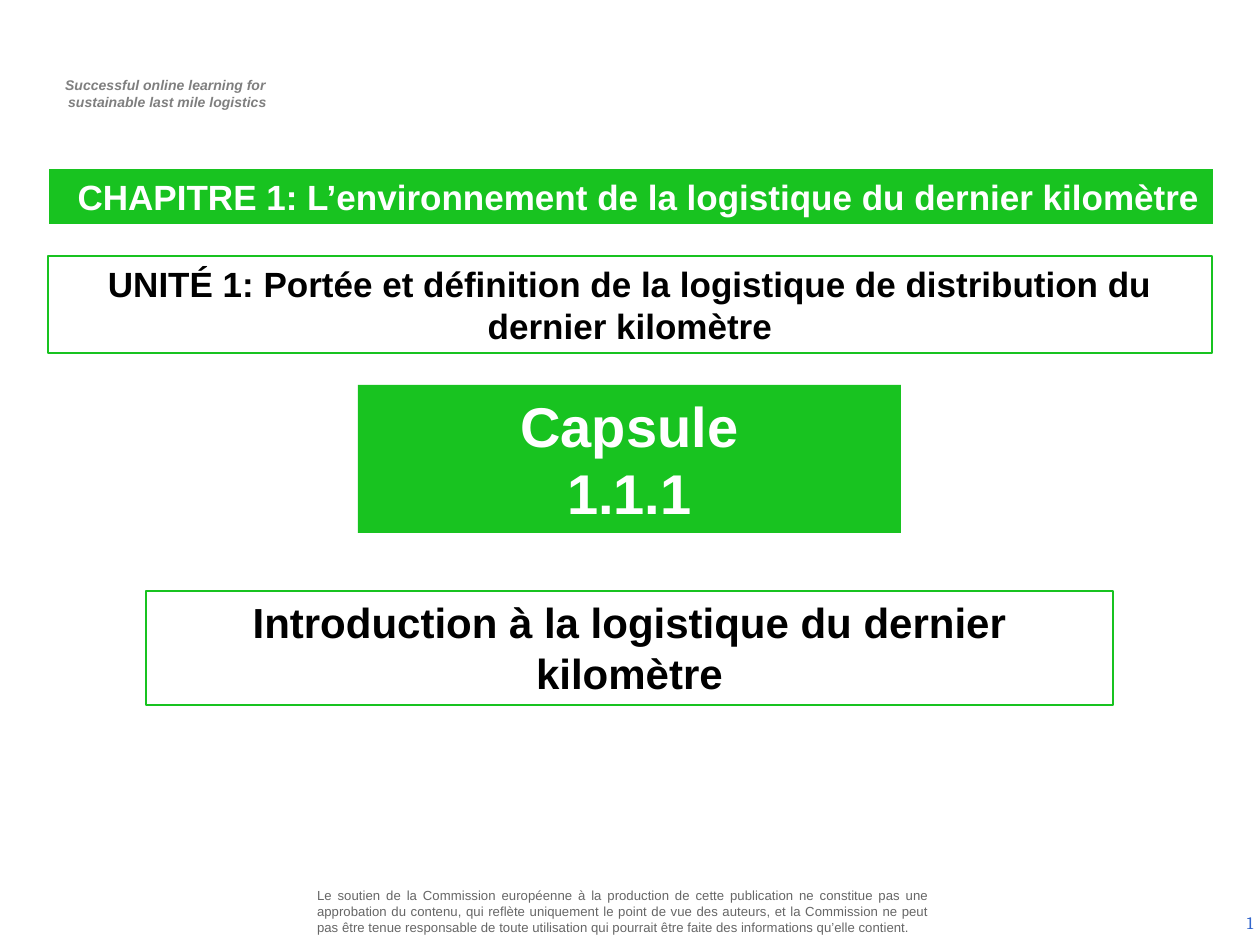
from pptx import Presentation
from pptx.dml.color import RGBColor
from pptx.enum.shapes import MSO_SHAPE as SHAPE
from pptx.enum.text import MSO_ANCHOR as ANCHOR, PP_ALIGN as ALIGN
from pptx.util import Emu, Pt

SCALE = 914400 / 126
GREEN = RGBColor(0x18, 0xC3, 0x20)
WHITE = RGBColor(0xFF, 0xFF, 0xFF)
BLACK = RGBColor(0x00, 0x00, 0x00)
GRAY = RGBColor(0x7F, 0x7F, 0x7F)
DARK_GRAY = RGBColor(0x66, 0x66, 0x66)
BLUE = RGBColor(0x33, 0x66, 0xCC)


def px(length):
    return Emu(round(length * SCALE))


def write(shape, lines, size, color, align, font="Arial", bold=False, italic=False,
          anchor=ANCHOR.TOP, insets=(13, 6, 13, 6)):
    frame = shape.text_frame
    frame.word_wrap = True
    frame.vertical_anchor = anchor
    frame.margin_left, frame.margin_top, frame.margin_right, frame.margin_bottom = map(px, insets)
    for index, line in enumerate(lines):
        paragraph = frame.add_paragraph() if index else frame.paragraphs[0]
        paragraph.alignment = align
        run = paragraph.add_run()
        run.text = line
        run.font.name = font
        run.font.size = Pt(size)
        run.font.bold = bold
        run.font.italic = italic
        run.font.color.rgb = color


presentation = Presentation()
presentation.slide_width = px(1260)
presentation.slide_height = px(945)
slide = presentation.slides.add_slide(presentation.slide_layouts[6])

tagline = slide.shapes.add_textbox(px(37), px(71), px(256), px(47))
write(tagline, ["Successful online learning for ", "sustainable last mile logistics"],
      8, GRAY, ALIGN.CENTER, bold=True, italic=True, insets=(18, 6, 13, 6))

disclaimer = slide.shapes.add_textbox(px(312), px(886), px(621), px(50))
write(disclaimer, [
    "Le soutien de la Commission européenne à la production de cette publication ne constitue pas "
    "une approbation du contenu, qui reflète uniquement le point de vue des auteurs, et la "
    "Commission ne peut pas être tenue responsable de toute utilisation qui pourrait être faite "
    "des informations qu’elle contient."],
    7.5, DARK_GRAY, ALIGN.JUSTIFY, anchor=ANCHOR.MIDDLE, insets=(5, 5, 5, 5))

page_number = slide.shapes.add_textbox(px(972), px(898), px(294), px(50))
write(page_number, ["1"], 10, BLUE, ALIGN.RIGHT, font="Cambria", anchor=ANCHOR.MIDDLE)

banners = [
    ((358, 385, 543, 148), ["Capsule", "1.1.1"], 32, ALIGN.CENTER, None),
    ((146, 591, 967, 114), ["Introduction à la logistique du dernier kilomètre"],
     24, ALIGN.CENTER, 1.5),
    ((49, 169, 1164, 55), ["CHAPITRE 1: L’environnement de la logistique du dernier kilomètre"],
     20, ALIGN.RIGHT, None),
    ((48, 256, 1164, 97),
     ["UNITÉ 1: Portée et définition de la logistique de distribution du dernier kilomètre"],
     20, ALIGN.CENTER, 0.75),
]
for bounds, lines, size, align, outline in banners:
    banner = slide.shapes.add_shape(SHAPE.RECTANGLE, *map(px, bounds))
    banner.shadow.inherit = False
    if outline:
        banner.fill.background()
        banner.line.color.rgb = GREEN
        banner.line.width = Pt(outline)
    else:
        banner.fill.solid()
        banner.fill.fore_color.rgb = GREEN
        banner.line.fill.background()
    write(banner, lines, size, BLACK if outline else WHITE, align, bold=True)

presentation.save("out.pptx")
